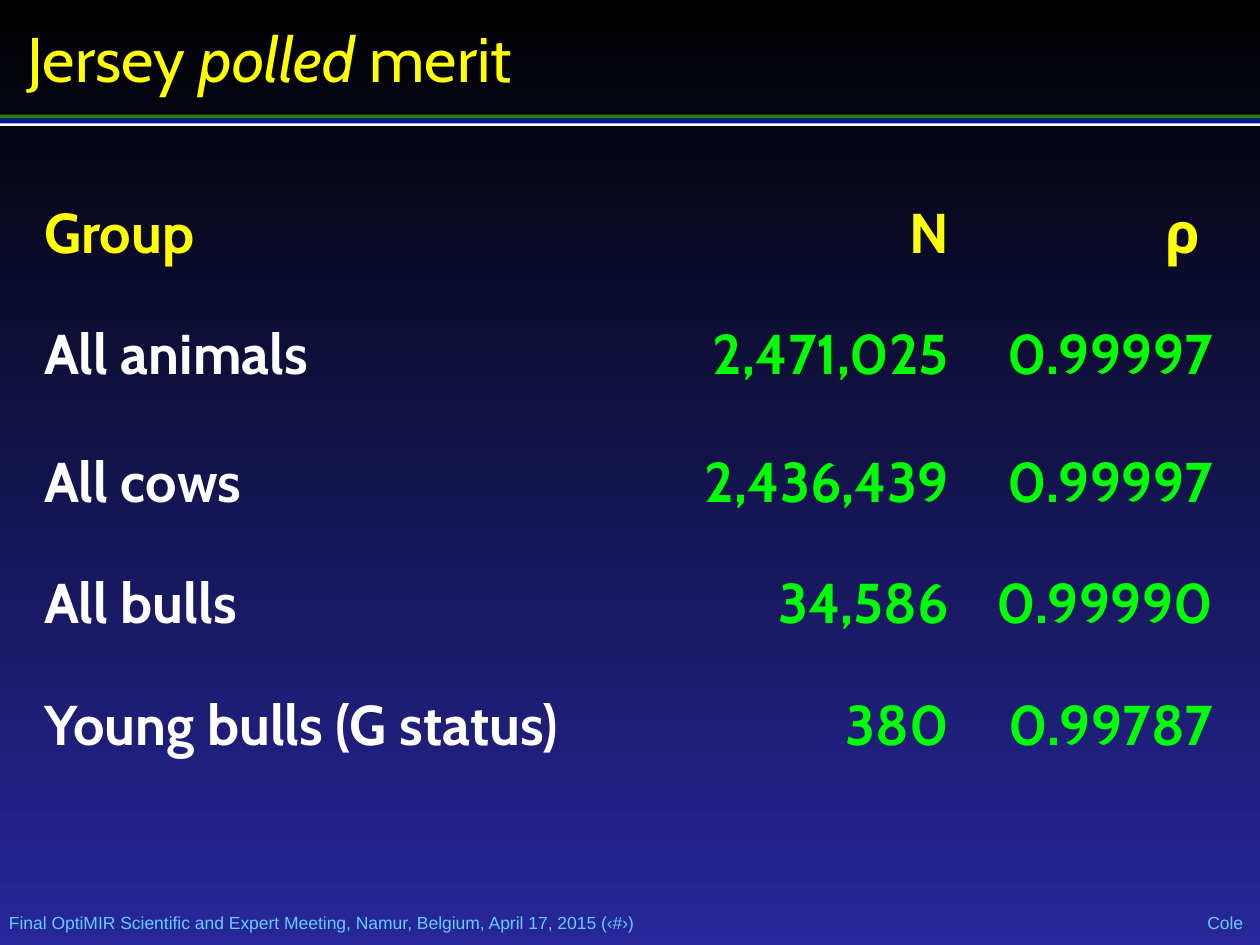
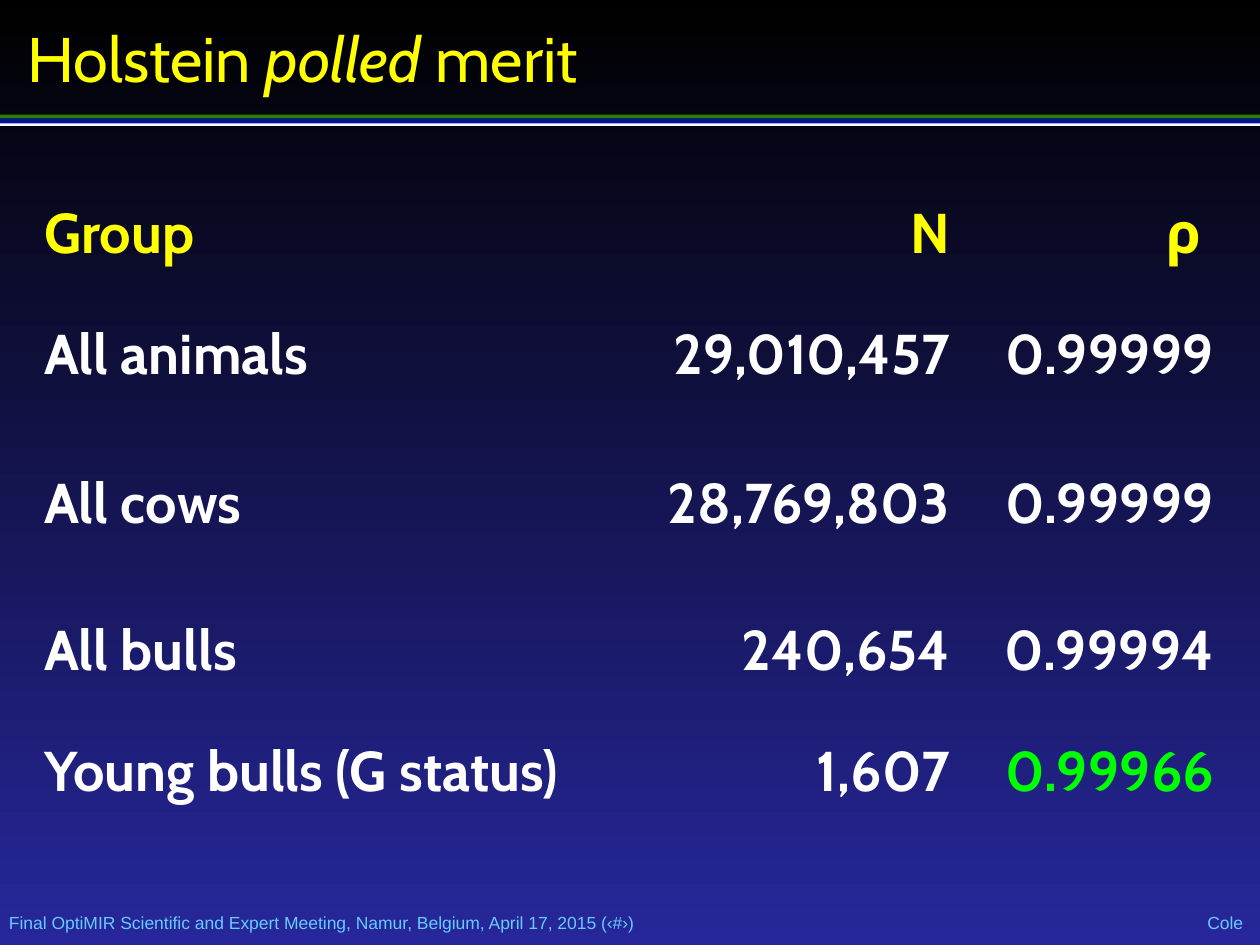
import pptx
import pptx.util
import pptx.dml.color
import pptx.enum.shapes
import pptx.enum.text

Cm = pptx.util.Cm
Pt = pptx.util.Pt
ALIGN = pptx.enum.text.PP_ALIGN
MIDDLE = pptx.enum.text.MSO_ANCHOR.MIDDLE
RECT = pptx.enum.shapes.MSO_SHAPE.RECTANGLE

YELLOW, WHITE, GREEN, SKY = "FFFF00", "FFFFFF", "00FF00", "66CCFF"
BACK = ("000000", "27279B")
BANDS = ((0, 0.08, "2A7E00"), (0.15, 0.08, WHITE), (0.08, 0.1, "001799"))
PLAIN = "{2D5ABB26-0587-4C30-8999-92F81FD0307C}"
WIDTH, HEIGHT = 25.4, 19.05
MEETING = "Final OptiMIR Scientific and Expert Meeting, Namur, Belgium, April 17, 2015 (‹#›)"
HEAD = ("Group", "N", "ρ")
GROUPS = ("All animals", "All cows", "All bulls", "Young bulls (G status)")

BREEDS = (
    {
        "name": "Jersey",
        "cols": (12.55, 6.2, 5.33),
        "rows": (2.44, 2.59, 2.44, 2.44, 2.44),
        "counts": ("2,471,025", "2,436,439", "34,586", "380"),
        "rhos": ("0.99997", "0.99997", "0.99990", "0.99787"),
        "green": {(row, col) for row in range(1, 5) for col in (1, 2)},
    },
    {
        "name": "Holstein",
        "cols": (11.96, 6.81, 5.33),
        "rows": (2.44, 3, 2.97, 2.44, 2.44),
        "counts": ("29,010,457", "28,769,803", "240,654", "1,607"),
        "rhos": ("0.99999", "0.99999", "0.99994", "0.99966"),
        "green": {(4, 2)},
    },
)


def color(code):
    return pptx.dml.color.RGBColor.from_string(code)


def style(run, face, size, code, bold=False):
    font = run.font
    font.name, font.size, font.bold = face, Pt(size), bold
    font.color.rgb = color(code)


def add_text(slide, box, inset=0, wrap=True):
    frame = slide.shapes.add_textbox(*map(Cm, box)).text_frame
    frame.word_wrap = wrap
    frame.vertical_anchor = MIDDLE
    frame.margin_left = frame.margin_right = Cm(inset)
    frame.margin_top = frame.margin_bottom = Cm(inset)
    return frame.paragraphs[0]


def add_back(slide):
    fill = slide.background.fill
    fill.gradient()
    fill.gradient_angle = 270
    for stop, code in zip(fill.gradient_stops, BACK):
        stop.color.rgb = color(code)


def add_foot(slide, box):
    left, top, width, height = box
    note = add_text(slide, (left, top, 20.55, height))
    note.text = MEETING
    name = add_text(slide, (left + width - 0.76, top, 0.76, height), wrap=False)
    name.text = "Cole"
    name.alignment = ALIGN.CENTER
    for para in (note, name):
        style(para.runs[0], "Arial", 10, SKY)


def add_bands(slide, box):
    left, top, width = box
    for drop, height, code in BANDS:
        band = slide.shapes.add_shape(
            RECT, Cm(left), Cm(top + drop), Cm(width), Cm(height))
        band.shadow.inherit = False
        band.fill.solid()
        band.fill.fore_color.rgb = color(code)
        band.line.fill.background()


def add_title(slide, box, name):
    para = add_text(slide, box, inset=0.13)
    for words, slant in ((name + " ", False), ("polled", True), (" merit", False)):
        run = para.add_run()
        run.text = words
        style(run, "Cabin", 36, YELLOW)
        run.font.italic = slant


def add_merit(slide, box, breed):
    left, top = box
    cols, rows = breed["cols"], breed["rows"]
    frame = slide.shapes.add_table(
        len(rows), len(cols), Cm(left), Cm(top), Cm(sum(cols)), Cm(sum(rows)))
    table = frame.table
    table.first_row = table.horz_banding = False
    table._tbl.tblPr[0].text = PLAIN
    for col, width in zip(table.columns, cols):
        col.width = Cm(width)
    for row, height in zip(table.rows, rows):
        row.height = Cm(height)
    data = (HEAD, *zip(GROUPS, breed["counts"], breed["rhos"]))
    for r, line in enumerate(data):
        for c, words in enumerate(line):
            cell = table.cell(r, c)
            cell.fill.background()
            para = cell.text_frame.paragraphs[0]
            para.text = words
            para.alignment = ALIGN.RIGHT if c else ALIGN.LEFT
            code = YELLOW if r == 0 else GREEN if (r, c) in breed["green"] else WHITE
            style(para.runs[0], "Cabin", 32, code, bold=True)
    table.cell(0, 2).margin_right = Cm(0.53)


def add_slide(deck, breed):
    slide = deck.slides.add_slide(deck.slide_layouts[6])
    add_back(slide)
    add_foot(slide, (0.18, 18.39, 24.9, 0.43))
    add_bands(slide, (0, 2.31, WIDTH))
    add_title(slide, (0.43, 0.25, 24.54, 1.8), breed["name"])
    add_merit(slide, (0.64, 3.89), breed)


def main():
    deck = pptx.Presentation()
    deck.slide_width, deck.slide_height = Cm(WIDTH), Cm(HEIGHT)
    for breed in BREEDS:
        add_slide(deck, breed)
    deck.save("out.pptx")


if __name__ == "__main__":
    main()
